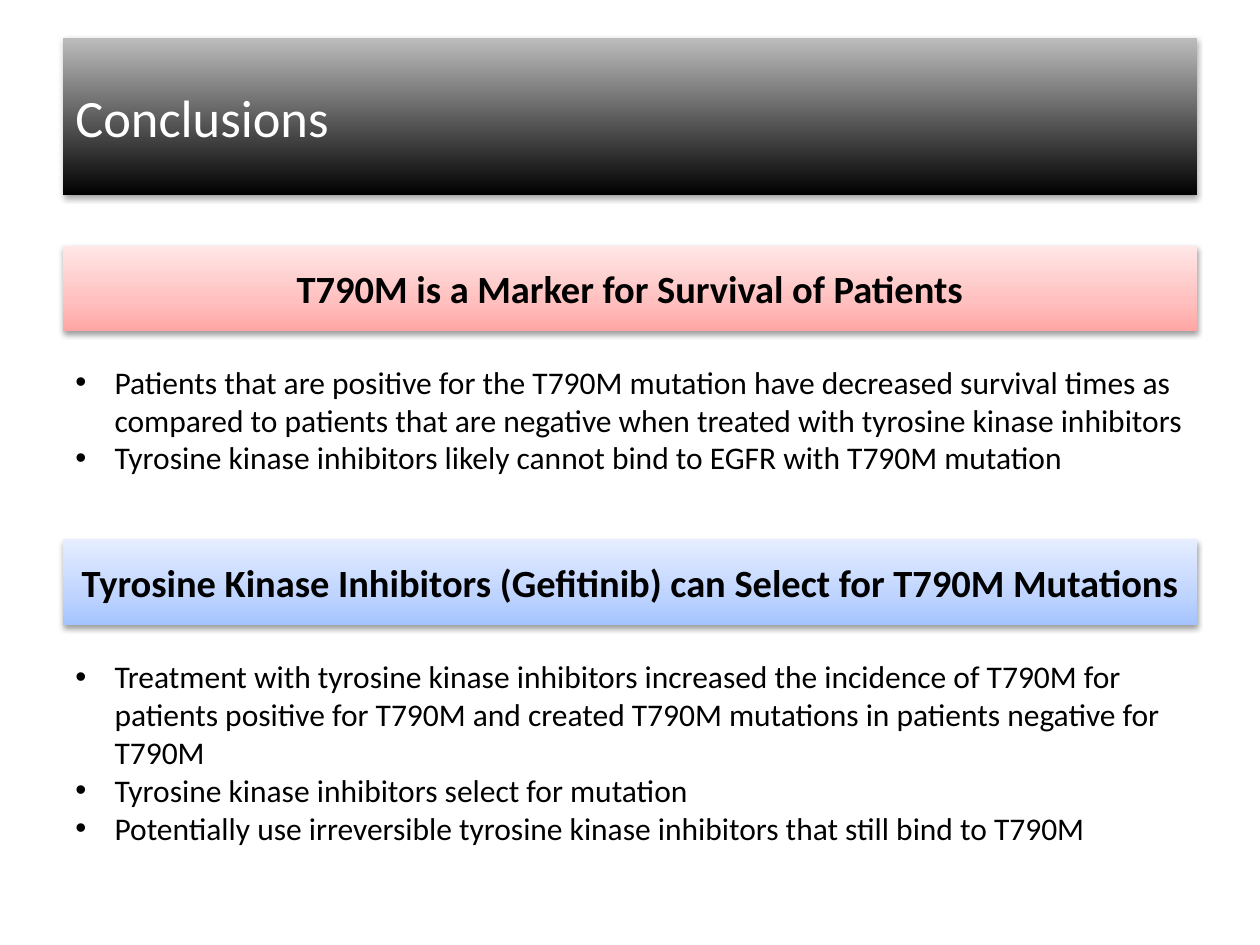
from dataclasses import dataclass

from lxml.etree import SubElement
from pptx import Presentation
from pptx.dml.color import RGBColor
from pptx.enum.shapes import MSO_SHAPE
from pptx.enum.text import MSO_ANCHOR, MSO_AUTO_SIZE, PP_ALIGN
from pptx.oxml.ns import qn
from pptx.shapes.autoshape import Shape
from pptx.slide import Slide
from pptx.text.text import TextFrame
from pptx.util import Cm, Pt

COLORS = {
    "white": "FFFFFF",
    "black": "000000",
    "gray": "BDBDBD",
    "red": "FFA6A5",
    "red_middle": "FFC0BF",
    "red_light": "FFE7E7",
    "blue": "A4C4FF",
    "blue_middle": "BFD4FF",
    "blue_light": "E6EEFF",
}
LEFT = Cm(1.27)
WIDTH = Cm(22.86)
INDENT = Cm(0.79)


@dataclass
class Banner:
    text: str
    top: float
    height: float
    stops: dict[int, str]
    size: int = 22
    color: str = "black"
    bold: bool = True
    align: PP_ALIGN = PP_ALIGN.CENTER
    shadow_opacity: int = 38
    shadow_distance: float = 1.6


@dataclass
class BulletList:
    top: float
    height: float
    items: list[str]


BANNERS = [
    Banner("Conclusions", 0.76, 3.18, {0: "black", 100: "gray"},
           size=30, color="white", bold=False, align=PP_ALIGN.LEFT,
           shadow_opacity=35, shadow_distance=1.8),
    Banner("T790M is a Marker for Survival of Patients", 4.95, 1.73,
           {0: "red", 35: "red_middle", 100: "red_light"}),
    Banner("Tyrosine Kinase Inhibitors (Gefitinib) can Select for T790M Mutations",
           10.87, 1.73, {0: "blue", 35: "blue_middle", 100: "blue_light"}),
]
BULLET_LISTS = [
    BulletList(7.19, 3.33, [
        "Patients that are positive for the T790M mutation have decreased survival times as "
        "compared to patients that are negative when treated with tyrosine kinase inhibitors",
        "Tyrosine kinase inhibitors likely cannot bind to EGFR with T790M mutation",
    ]),
    BulletList(13.13, 4.88, [
        "Treatment with tyrosine kinase inhibitors increased the incidence of T790M for "
        "patients positive for T790M and created T790M mutations in patients negative for T790M",
        "Tyrosine kinase inhibitors select for mutation",
        "Potentially use irreversible tyrosine kinase inhibitors that still bind to T790M",
    ]),
]


def write_text(frame: TextFrame, lines: list[str], *, size: int, color: str = "black",
               bold: bool = False, align: PP_ALIGN = PP_ALIGN.LEFT,
               bullet: bool = False) -> None:
    frame.word_wrap = True
    for index, line in enumerate(lines):
        paragraph = frame.add_paragraph() if index else frame.paragraphs[0]
        paragraph.alignment = align
        if bullet:
            properties = paragraph._p.get_or_add_pPr()
            properties.set("marL", str(INDENT))
            properties.set("indent", str(-INDENT))
            SubElement(properties, qn("a:buFont"), typeface="Arial")
            SubElement(properties, qn("a:buChar"), char="•")
        run = paragraph.add_run()
        run.text = line
        run.font.name = "Calibri"
        run.font.size = Pt(size)
        run.font.bold = bold
        run.font.color.rgb = RGBColor.from_string(COLORS[color])


def set_gradient(shape: Shape, stops: dict[int, str]) -> None:
    shape.fill.gradient()
    shape.fill.gradient_angle = 90
    stop_list = shape._element.spPr.find(qn("a:gradFill")).find(qn("a:gsLst"))
    for stop in list(stop_list):
        stop_list.remove(stop)
    for position, color in stops.items():
        stop = SubElement(stop_list, qn("a:gs"), pos=str(position * 1000))
        SubElement(stop, qn("a:srgbClr"), val=COLORS[color])


def set_shadow(shape: Shape, opacity: int, distance: float) -> None:
    shape.shadow.inherit = False
    effects = shape._element.spPr.find(qn("a:effectLst"))
    shadow = SubElement(effects, qn("a:outerShdw"), blurRad=str(Pt(3.1)),
                        dist=str(Pt(distance)), dir="5400000", rotWithShape="0")
    color = SubElement(shadow, qn("a:srgbClr"), val=COLORS["black"])
    SubElement(color, qn("a:alpha"), val=str(opacity * 1000))


def draw_banner(slide: Slide, banner: Banner) -> None:
    shape = slide.shapes.add_shape(MSO_SHAPE.RECTANGLE, LEFT, Cm(banner.top),
                                   WIDTH, Cm(banner.height))
    set_gradient(shape, banner.stops)
    shape.line.fill.background()
    set_shadow(shape, banner.shadow_opacity, banner.shadow_distance)
    shape.text_frame.vertical_anchor = MSO_ANCHOR.MIDDLE
    write_text(shape.text_frame, [banner.text], size=banner.size, color=banner.color,
               bold=banner.bold, align=banner.align)


def draw_bullet_list(slide: Slide, bullet_list: BulletList) -> None:
    shape = slide.shapes.add_textbox(LEFT, Cm(bullet_list.top),
                                     WIDTH, Cm(bullet_list.height))
    write_text(shape.text_frame, bullet_list.items, size=18, bullet=True)
    shape.text_frame.auto_size = MSO_AUTO_SIZE.SHAPE_TO_FIT_TEXT


def main() -> None:
    presentation = Presentation()
    presentation.slide_width = Cm(25.4)
    presentation.slide_height = Cm(19.05)
    slide = presentation.slides.add_slide(presentation.slide_layouts[6])
    for banner in BANNERS:
        draw_banner(slide, banner)
    for bullet_list in BULLET_LISTS:
        draw_bullet_list(slide, bullet_list)
    presentation.save("out.pptx")


if __name__ == "__main__":
    main()
